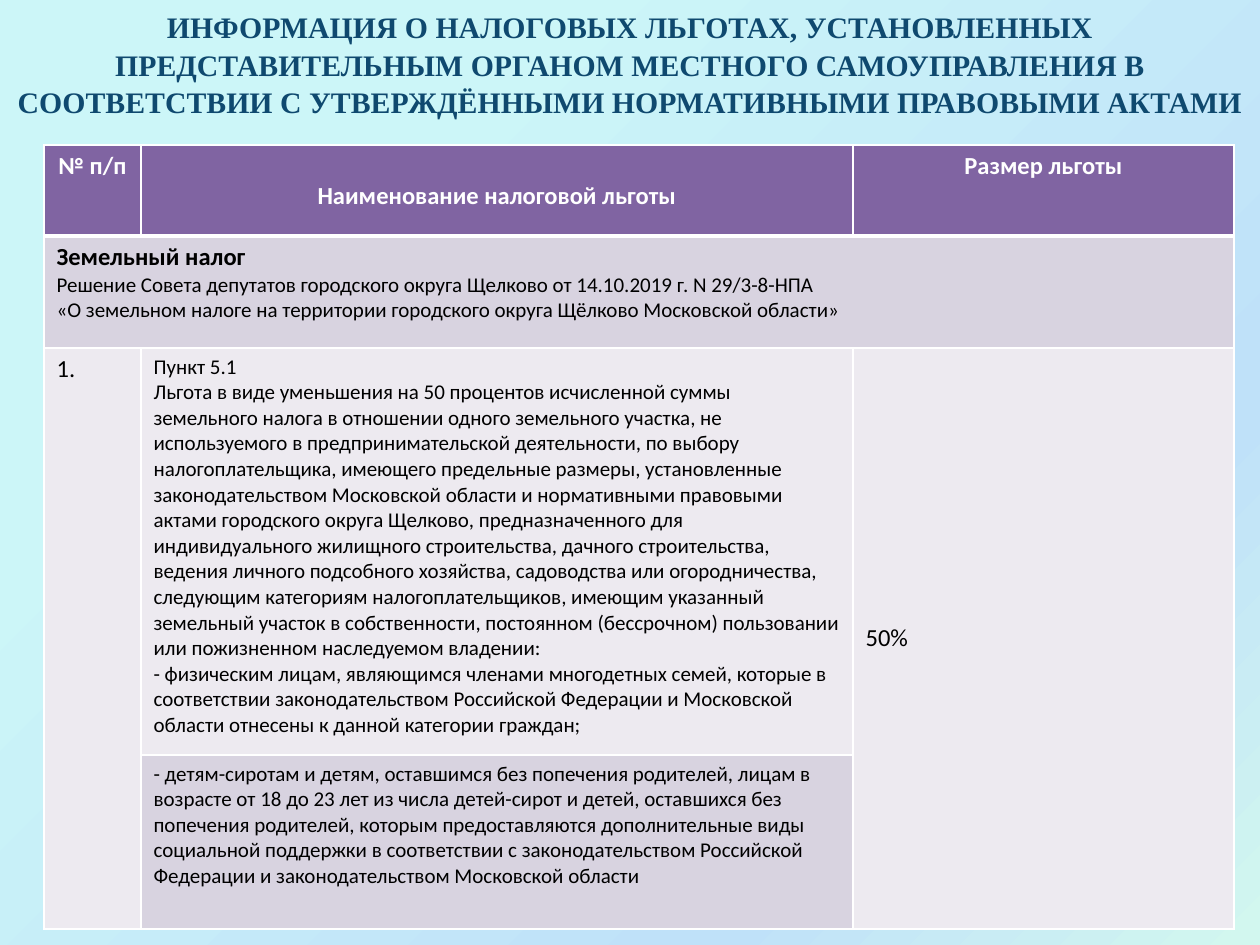
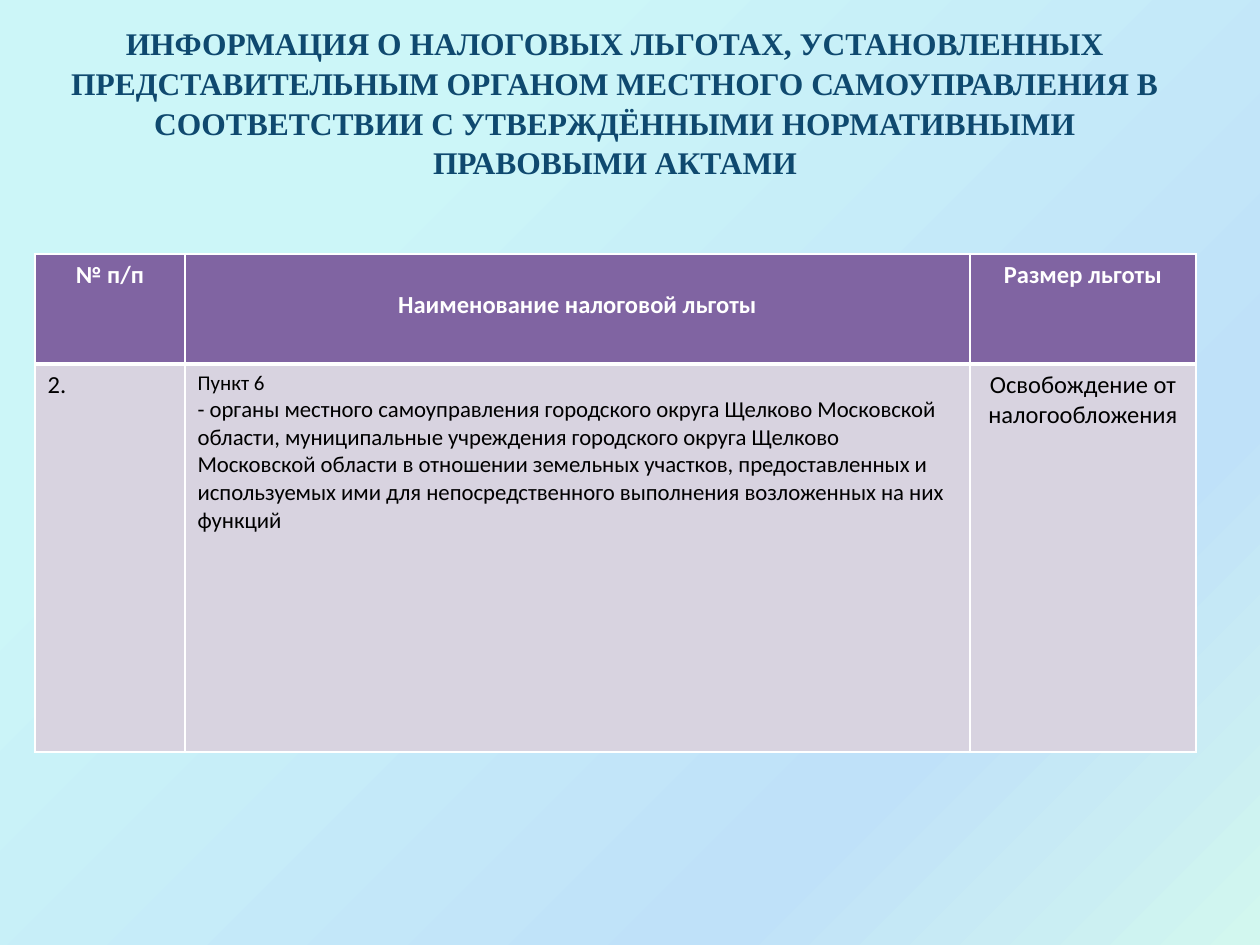
import copy
import pptx
import pptx.util
import pptx.dml.color
import pptx.enum.text
import pptx.oxml
import pptx.oxml.ns

PX = 914400 / 126
HUES = {
    "title": "0F496F", "head": "8064A2", "dark": "D8D3E0", "pale": "EDEAF0",
    "white": "FFFFFF", "black": "000000",
    "aqua": "CCF6F8", "sky": "BFE1F9", "mint": "D2F7EF",
}
TITLE = ("ИНФОРМАЦИЯ О НАЛОГОВЫХ ЛЬГОТАХ, УСТАНОВЛЕННЫХ ПРЕДСТАВИТЕЛЬНЫМ "
         "ОРГАНОМ МЕСТНОГО САМОУПРАВЛЕНИЯ В СООТВЕТСТВИИ С УТВЕРЖДЁННЫМИ "
         "НОРМАТИВНЫМИ ПРАВОВЫМИ АКТАМИ")
HEADS = ["№ п/п", "Наименование налоговой льготы", "Размер льготы"]
ALIGN = pptx.enum.text.PP_ALIGN
ANCHOR = pptx.enum.text.MSO_ANCHOR


def px(n):
    return pptx.util.Emu(round(n * PX))


def hue(name):
    return pptx.dml.color.RGBColor.from_string(HUES[name])


class Deck:
    def __init__(self):
        self.prs = pptx.Presentation()
        self.prs.slide_width, self.prs.slide_height = px(1260), px(945)
        self.slide = None
        self.paint()

    def paint(self):
        """Shared diagonal gradient on the master."""
        fill = self.prs.slide_master.background.fill
        fill.gradient()
        fill.gradient_angle = 315
        last = fill.gradient_stops[1]._gs
        last.addnext(copy.deepcopy(last))
        stops = zip(fill.gradient_stops, ("aqua", "sky", "mint"), (0.25, 0.75, 1))
        for stop, name, pos in stops:
            stop.color.rgb = hue(name)
            stop.position = pos

    def start(self, box, size):
        """New slide with its title."""
        self.slide = self.prs.slides.add_slide(self.prs.slide_layouts[5])
        title = self.slide.shapes.title
        title.left, title.top, title.width, title.height = map(px, box)
        frame = title.text_frame
        frame.word_wrap = True
        frame.auto_size = pptx.enum.text.MSO_AUTO_SIZE.NONE
        frame.vertical_anchor = ANCHOR.TOP
        para = frame.paragraphs[0]
        para.alignment = ALIGN.CENTER
        para.line_spacing = 1.05
        self.run(para, TITLE, size, "title", True, "Times New Roman")

    def run(self, para, text, size, color="black", bold=False, face="Calibri"):
        run = para.add_run()
        run.text = text
        font = run.font
        font.name, font.size, font.bold = face, pptx.util.Pt(size), bold
        font.color.rgb = hue(color)

    def edge(self, cell, row):
        """White borders, thick under the header row."""
        props = cell._tc.get_or_add_tcPr()
        for side in "LRTB":
            thick = (row, side) in ((0, "B"), (1, "T"))
            props.append(pptx.oxml.parse_xml(
                f'<a:ln{side} {pptx.oxml.ns.nsdecls("a")} w="{38100 if thick else 12700}">'
                f'<a:solidFill><a:srgbClr val="{HUES["white"]}"/></a:solidFill></a:ln{side}>'))

    def grid(self, left, top, cols, rows, fills):
        """Table with header row; fills gives the colours of the body rows."""
        frame = self.slide.shapes.add_table(
            len(rows), len(cols), px(left), px(top), px(sum(cols)), px(sum(rows)))
        table = frame.table
        table.first_row = table.horz_banding = False
        for col, width in zip(table.columns, cols):
            col.width = px(width)
        for i, (row, height) in enumerate(zip(table.rows, rows)):
            row.height = px(height)
            for j, cell in enumerate(row.cells):
                self.edge(cell, i)
                cell.fill.solid()
                cell.fill.fore_color.rgb = hue(([("head",) * 3] + fills)[i][j])
        for j, head in enumerate(HEADS):
            self.cell(table.cell(0, j), [(head, 14, True)], ALIGN.CENTER, "white")
        table.cell(0, 1).margin_top = px(36)
        return table

    def cell(self, cell, lines, align=ALIGN.LEFT, color="black"):
        """Each line is (text, size) or (text, size, bold)."""
        frame = cell.text_frame
        for i, (text, size, *bold) in enumerate(lines):
            para = frame.add_paragraph() if i else frame.paragraphs[0]
            para.alignment = align
            self.run(para, text, size, color, bool(bold))


def main():
    deck = Deck()

    # Land tax: first benefit
    deck.start((0, 1, 1260, 121), 17)
    table = deck.grid(44, 145, (97, 712, 381), (91, 112, 407, 174),
                      [("dark",) * 3, ("pale",) * 3, ("pale", "dark", "pale")])
    table.cell(1, 0).merge(table.cell(1, 2))
    for j in (0, 2):
        table.cell(2, j).merge(table.cell(3, j))
    deck.cell(table.cell(1, 0), [
        ("Земельный налог", 14, True),
        ("Решение Совета депутатов городского округа Щелково "
         "от 14.10.2019 г. N 29/3-8-НПА", 12),
        ("«О земельном налоге на территории городского округа Щёлково "
         "Московской области»", 12)])
    deck.cell(table.cell(2, 0), [("1.", 14)])
    deck.cell(table.cell(2, 1), [
        ("Пункт 5.1", 12),
        ("Льгота в виде уменьшения на 50 процентов исчисленной суммы земельного "
         "налога в отношении одного земельного участка, не используемого в "
         "предпринимательской деятельности, по выбору налогоплательщика, имеющего "
         "предельные размеры, установленные законодательством Московской области и "
         "нормативными правовыми актами городского округа Щелково, предназначенного "
         "для индивидуального жилищного строительства, дачного строительства, "
         "ведения личного подсобного хозяйства, садоводства или огородничества, "
         "следующим категориям налогоплательщиков, имеющим указанный земельный "
         "участок в собственности, постоянном (бессрочном) пользовании или "
         "пожизненном наследуемом владении:", 12),
        ("- физическим лицам, являющимся членами многодетных семей, которые в "
         "соответствии законодательством Российской Федерации и Московской области "
         "отнесены к данной категории граждан;", 12)])
    deck.cell(table.cell(2, 2), [("50%", 14)])
    table.cell(2, 2).vertical_anchor = ANCHOR.MIDDLE
    deck.cell(table.cell(3, 1), [
        ("- детям-сиротам и детям, оставшимся без попечения родителей, лицам в "
         "возрасте от 18 до 23 лет из числа детей-сирот и детей, оставшихся без "
         "попечения родителей, которым предоставляются дополнительные виды "
         "социальной поддержки в соответствии с законодательством Российской "
         "Федерации и законодательством Московской области", 12)])

    # Land tax: second benefit
    deck.start((35, 16, 1160, 165), 18)
    table = deck.grid(35, 254, (150, 785, 226), (110, 388), [("dark",) * 3])
    deck.cell(table.cell(1, 0), [("2.", 14)])
    deck.cell(table.cell(1, 1), [
        ("Пункт 6", 12),
        ("- органы местного самоуправления городского округа Щелково Московской "
         "области, муниципальные учреждения городского округа Щелково Московской "
         "области в отношении земельных участков, предоставленных и используемых "
         "ими для непосредственного выполнения возложенных на них функций", 13)])
    deck.cell(table.cell(1, 2), [("Освобождение от налогообложения", 14)], ALIGN.CENTER)

    deck.prs.save("out.pptx")


if __name__ == "__main__":
    main()
